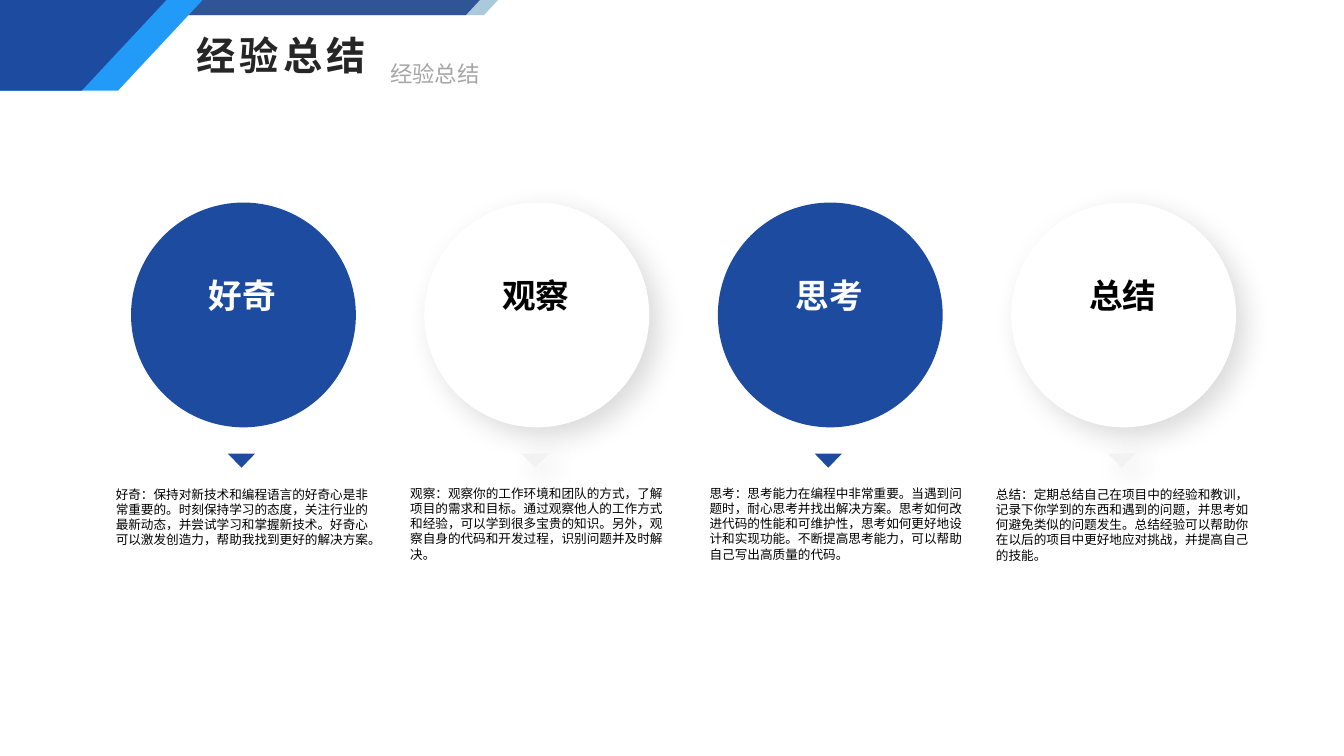
"""Build the experience summary slide with four labelled circles."""
from lxml.etree import SubElement
from pptx import Presentation
from pptx.dml.color import RGBColor
from pptx.enum.shapes import MSO_SHAPE
from pptx.enum.text import MSO_AUTO_SIZE, PP_ALIGN
from pptx.oxml.ns import qn
from pptx.util import Inches, Pt

COLORS = {
    "blue": "1D4BA0", "sky": "229BF8", "steel": "2F5597", "teal": "1A6D9F",
    "white": "FFFFFF", "pale": "F2F2F2", "black": "000000",
    "title": "262626", "subtitle": "A6A6A6",
}
HEADING_FONT, BODY_FONT = "Noto Sans CJK SC", "Inter"
PITCH = 2.91
TOPICS = [
    ("好奇", 1.05, 4.78, "保持对新技术和编程语言的好奇心是非常重要的。时刻保持学习的态度，关注行业的最新动态，并尝试学习和掌握新技术。好奇心可以激发创造力，帮助我找到更好的解决方案。"),
    ("观察", 3.97, 4.77, "观察你的工作环境和团队的方式，了解项目的需求和目标。通过观察他人的工作方式和经验，可以学到很多宝贵的知识。另外，观察自身的代码和开发过程，识别问题并及时解决。"),
    ("思考", 6.94, 4.77, "思考能力在编程中非常重要。当遇到问题时，耐心思考并找出解决方案。思考如何改进代码的性能和可维护性，思考如何更好地设计和实现功能。不断提高思考能力，可以帮助自己写出高质量的代码。"),
    ("总结", 9.78, 4.78, "定期总结自己在项目中的经验和教训，记录下你学到的东西和遇到的问题，并思考如何避免类似的问题发生。总结经验可以帮助你在以后的项目中更好地应对挑战，并提高自己的技能。"),
]


class SlideBuilder:
    def __init__(self, slide):
        self.slide = slide

    def paint(self, shape, color, alpha=None):
        shape.shadow.inherit = False
        shape.fill.solid()
        shape.fill.fore_color.rgb = RGBColor.from_string(COLORS[color])
        shape.line.fill.background()
        if alpha:
            fill = shape._element.spPr.find(qn("a:solidFill"))
            SubElement(fill[0], qn("a:alpha"), val=str(alpha * 1000))

    def shape(self, preset, box, color, alpha=None, shadow=False):
        shape = self.slide.shapes.add_shape(preset, *map(Inches, box))
        self.paint(shape, color, alpha)
        if shadow:
            self.soft_shadow(shape)
        return shape

    def soft_shadow(self, shape):
        effects = shape._element.spPr.find(qn("a:effectLst"))
        outer = SubElement(effects, qn("a:outerShdw"), blurRad=str(Pt(20)),
                           dist=str(Pt(9)), dir=str(45 * 60000),
                           algn="tl", rotWithShape="0")
        tint = SubElement(outer, qn("a:srgbClr"), val=COLORS["black"])
        SubElement(tint, qn("a:alpha"), val="15000")

    def ribbon(self, x, color):
        ribbon = self.shape(MSO_SHAPE.PARALLELOGRAM, (x, 0, 3.76, 0.15), color,
                            37 if color == "teal" else None)
        ribbon.adjustments[0] = 0.93

    def outline(self, points, color):
        start, *rest = [(Inches(x), Inches(y)) for x, y in points]
        pen = self.slide.shapes.build_freeform(*start)
        pen.add_line_segments(rest, close=True)
        self.paint(pen.convert_to_shape(), color)

    def text(self, box, words, size, color, font=HEADING_FONT, bold=False,
             align=PP_ALIGN.LEFT, wrap=True, inset=True, spacing=0):
        frame = self.slide.shapes.add_textbox(*map(Inches, box)).text_frame
        frame.word_wrap = wrap
        frame.auto_size = MSO_AUTO_SIZE.SHAPE_TO_FIT_TEXT
        if not inset:
            frame.margin_left = frame.margin_right = 0
            frame.margin_top = frame.margin_bottom = 0
        paragraph = frame.paragraphs[0]
        paragraph.text = words
        paragraph.alignment = align
        style = paragraph.font
        style.size, style.bold, style.name = Pt(size), bold, font
        style.color.rgb = RGBColor.from_string(COLORS[color])
        SubElement(style._element, qn("a:ea"), typeface=font)
        if spacing:
            style._element.set("spc", str(spacing * 100))

    def topic(self, index, name):
        left = 1.3 + index * PITCH
        raised = index % 2 == 1
        disc, label, pointer = (("white", "black", "pale") if raised
                                else ("blue", "white", "blue"))
        self.shape(MSO_SHAPE.OVAL, (left, 2.01, 2.23, 2.23), disc, shadow=raised)
        self.text((left + 0.12, 2.73, 1.97, 0.4), name, 24, label, bold=True,
                  align=PP_ALIGN.CENTER, inset=False)
        arrow = self.shape(MSO_SHAPE.ISOSCELES_TRIANGLE,
                           (left + 0.96, 4.5, 0.27, 0.14), pointer, shadow=raised)
        arrow.rotation = 180


def main():
    deck = Presentation()
    deck.slide_width, deck.slide_height = Inches(13.33), Inches(7.5)
    builder = SlideBuilder(deck.slides.add_slide(deck.slide_layouts[6]))

    builder.ribbon(1.18, "teal")
    builder.ribbon(1, "steel")
    builder.outline([(0.1, 0), (2.01, 0), (1.17, 0.9), (-0.03, 0.9), (-0.03, 0.14)], "sky")
    builder.outline([(-0.02, 0), (1.65, 0), (0.81, 0.9), (-0.02, 0.9)], "blue")
    builder.text((1.85, 0.26, 1.92, 0.57), "经验总结", 28, "title", bold=True,
                 wrap=False, spacing=3)
    builder.text((3.77, 0.55, 1.09, 0.37), "经验总结", 16, "subtitle", wrap=False)

    for index, (name, left, top, advice) in enumerate(TOPICS):
        builder.topic(index, name)
        builder.text((left, top, 2.7, 1.01), f"{name}：{advice}", 9, "black", BODY_FONT)

    deck.save("out.pptx")


if __name__ == "__main__":
    main()
